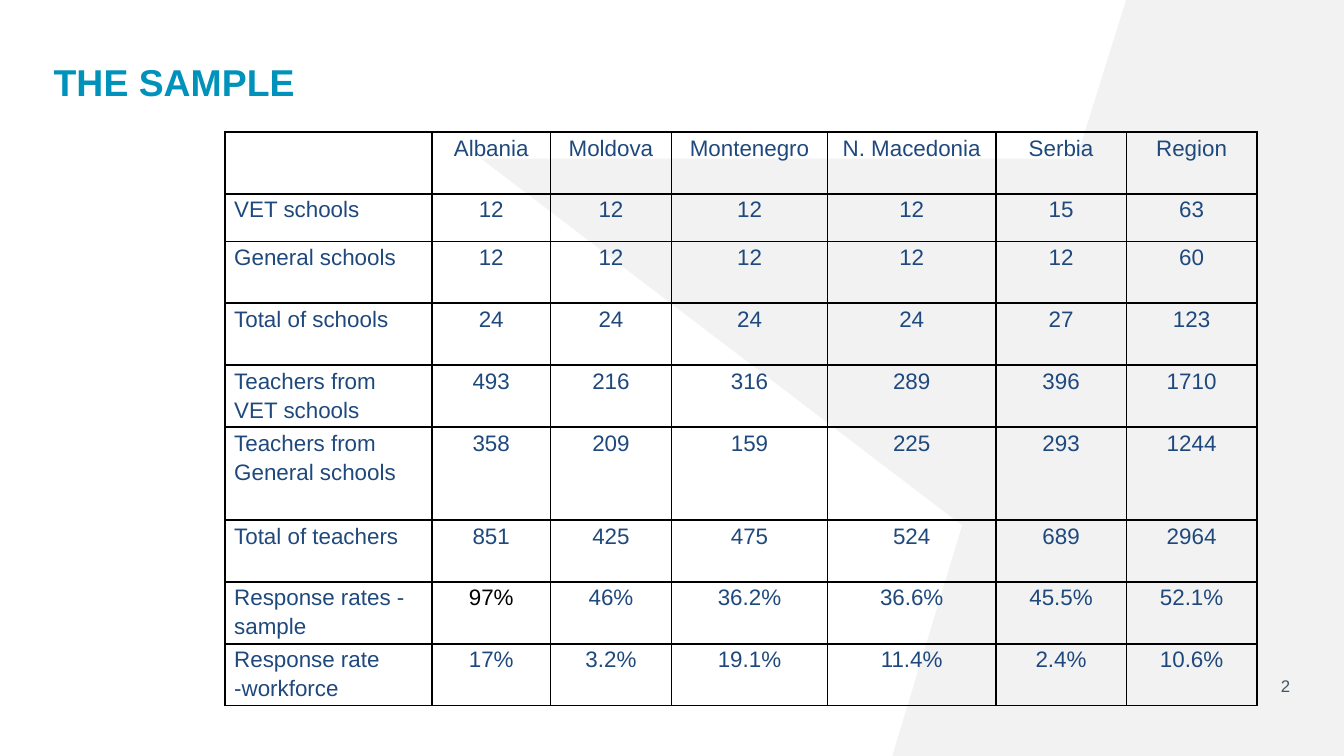
from lxml import etree
from pptx import Presentation
from pptx.dml.color import RGBColor
from pptx.enum.text import MSO_ANCHOR, PP_ALIGN
from pptx.oxml.ns import qn
from pptx.util import Inches, Pt

LEFT, CENTER, RIGHT = PP_ALIGN.LEFT, PP_ALIGN.CENTER, PP_ALIGN.RIGHT
TOP, MIDDLE = MSO_ANCHOR.TOP, MSO_ANCHOR.MIDDLE
W = Inches(10)
H = W * 9 // 16
UNIT = W // 100

TITLE = {"size": Pt(20), "bold": True, "name": "Arial"}
NUMBER = {"size": Pt(9), "name": "Arial"}
BODY = {"size": Pt(12), "name": "Arial"}

COLS = [1.54, 0.88, 0.9, 1.16, 1.25, 0.97, 0.97]
ROWS = [3, 2.3, 3, 3, 3, 4.5, 3, 3, 3]
DATA = [
    ["", "Albania", "Moldova", "Montenegro", "N. Macedonia", "Serbia", "Region"],
    ["VET schools", "12", "12", "12", "12", "15", "63"],
    ["General schools", "12", "12", "12", "12", "12", "60"],
    ["Total of schools", "24", "24", "24", "24", "27", "123"],
    ["Teachers from VET schools", "493", "216", "316", "289", "396", "1710"],
    ["Teachers from General schools", "358", "209", "159", "225", "293", "1244"],
    ["Total of teachers", "851", "425", "475", "524", "689", "2964"],
    ["Response rates - sample", "97%", "46%", "36.2%", "36.6%", "45.5%", "52.1%"],
    ["Response rate -workforce", "17%", "3.2%", "19.1%", "11.4%", "2.4%", "10.6%"],
]
HIGHLIGHT = (7, 1)


def rgb(value):
    return RGBColor.from_string(value)


def area(*units):
    return [int(u * UNIT) for u in units]


def write(p, text, fmt, color, align, spacing):
    p.alignment = align
    p.line_spacing = spacing
    r = p.add_run()
    r.text = text
    for name, value in fmt.items():
        setattr(r.font, name, value)
    r.font.color.rgb = rgb(color)


def add_backdrop(slide, box):
    x, y, w, h = box
    percents = [(74.75, 0), (100, 0), (100, 100), (47.65, 100), (55.75, 69.5), (0, 21), (69, 21)]
    points = [(int(x + u * w / 100), int(y + v * h / 100)) for u, v in percents]
    builder = slide.shapes.build_freeform(*points[0])
    builder.add_line_segments(points[1:], close=True)
    sp = builder.convert_to_shape()
    sp.shadow.inherit = False
    sp.fill.solid()
    sp.fill.fore_color.rgb = rgb("F2F2F2")
    sp.line.fill.background()


def add_label(slide, box, text, fmt, color, align=LEFT, anchor=TOP, spacing=1.0):
    tf = slide.shapes.add_textbox(*box).text_frame
    tf.word_wrap = True
    tf.vertical_anchor = anchor
    tf.margin_left = tf.margin_right = tf.margin_top = tf.margin_bottom = 0
    write(tf.paragraphs[0], text, fmt, color, align, spacing)


def add_borders(cell):
    tcPr = cell._tc.get_or_add_tcPr()
    for i, side in enumerate(("lnL", "lnR", "lnT", "lnB")):
        ln = etree.Element(qn(f"a:{side}"), w=str(Pt(1)))
        fill = etree.SubElement(ln, qn("a:solidFill"))
        etree.SubElement(fill, qn("a:srgbClr"), val="000000")
        tcPr.insert(i, ln)


def add_sample_table(slide, box):
    table = slide.shapes.add_table(len(ROWS), len(COLS), *box).table
    table.first_row = table.horz_banding = False
    for column, share in zip(table.columns, COLS):
        column.width = int(box[2] * share / sum(COLS))
    for row, share in zip(table.rows, ROWS):
        row.height = int(box[3] * share / sum(ROWS))
    for i, values in enumerate(DATA):
        for j, text in enumerate(values):
            cell = table.cell(i, j)
            cell.fill.background()
            cell.margin_left = cell.margin_right = Inches(0.07)
            cell.margin_top = cell.margin_bottom = 0
            add_borders(cell)
            if text:
                color = "000000" if (i, j) == HIGHLIGHT else "1F497D"
                align = CENTER if j else LEFT
                write(cell.text_frame.paragraphs[0], text, BODY, color, align, 1.15)


def main():
    prs = Presentation()
    prs.slide_width, prs.slide_height = W, H
    slide = prs.slides.add_slide(prs.slide_layouts[6])
    add_backdrop(slide, [*area(35.8, 0, 64.2), H])
    add_label(slide, area(4, 4.8, 92, 6), "THE SAMPLE", TITLE, "0092BB", spacing=0.9)
    add_label(slide, area(94.1, 50.35, 1.9, 1.4), "2", NUMBER, "455560", RIGHT, MIDDLE)
    add_sample_table(slide, area(16.73, 9.82, 76.8, 42.7))
    prs.save("out.pptx")


if __name__ == "__main__":
    main()
